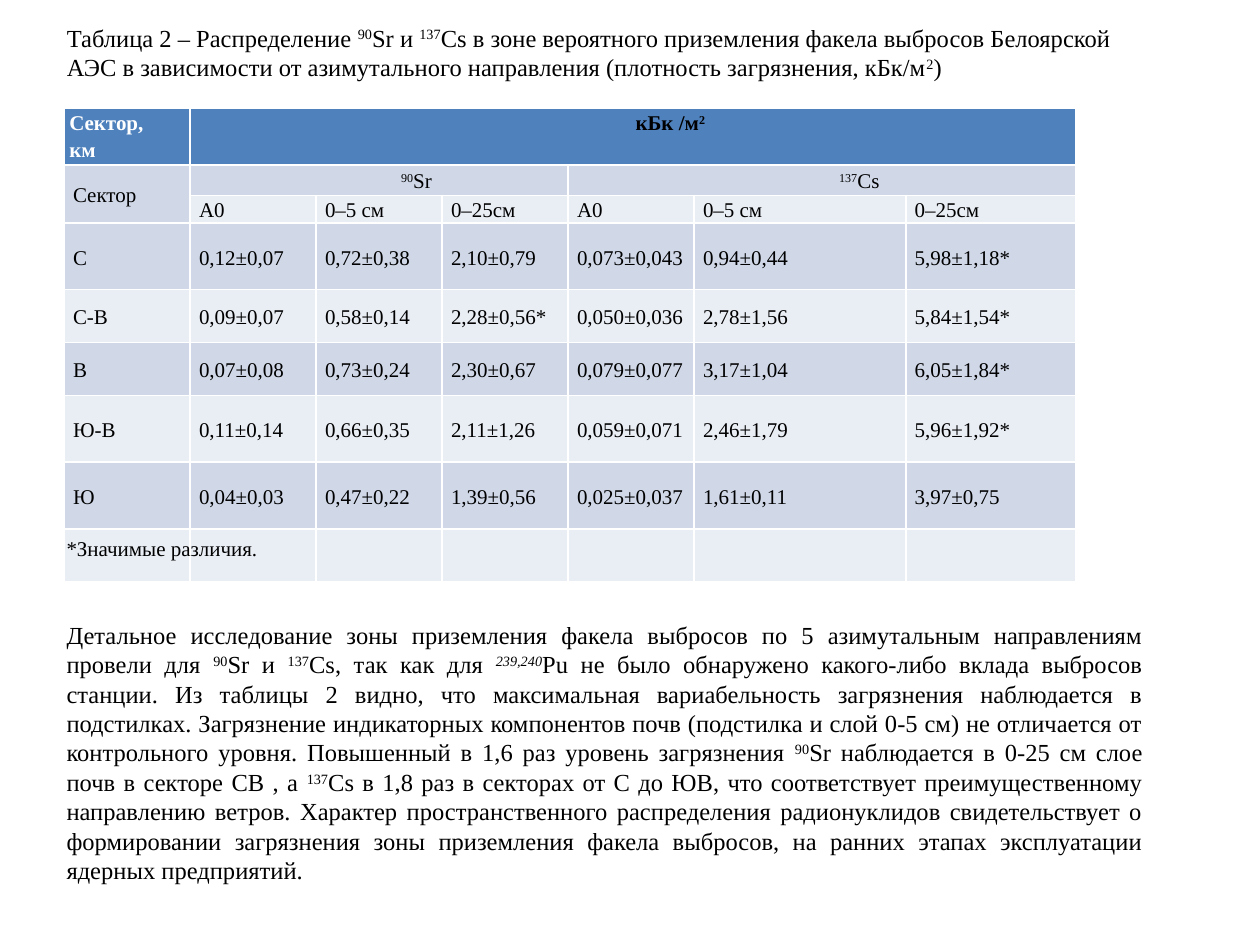
from pptx import Presentation
from pptx.dml.color import RGBColor
from pptx.enum.text import MSO_ANCHOR, MSO_AUTO_SIZE, PP_ALIGN
from pptx.util import Inches, Pt

LEFT, CENTER, JUSTIFY = PP_ALIGN.LEFT, PP_ALIGN.CENTER, PP_ALIGN.JUSTIFY
TOP, MIDDLE = MSO_ANCHOR.TOP, MSO_ANCHOR.MIDDLE
NO_FIT = MSO_AUTO_SIZE.NONE

FONT = "Times New Roman"
COLORS = {"text": "000000", "head_text": "FFFFFF", "head": "4F81BD",
          "dark_band": "D0D8E8", "light_band": "E9EDF4"}

# Text is a list of runs: a string, or (string, style) with "sup" or "sup italic"
SR, CS = ("90", "sup"), ("137", "sup")
CAPTION = ["Таблица 2 – Распределение ", SR, "Sr и ", CS,
           "Cs в зоне вероятного приземления факела выбросов Белоярской АЭС "
           "в зависимости от азимутального направления (плотность загрязнения, кБк/м",
           ("2", "sup"), ")"]
FOOTNOTE = ["*Значимые различия."]
BODY = ["Детальное исследование зоны приземления факела выбросов по 5 азимутальным "
        "направлениям провели для ", SR, "Sr и ", CS, "Cs, так как для ",
        ("239,240", "sup italic"),
        "Pu не было обнаружено какого-либо вклада выбросов станции. Из таблицы 2 видно, "
        "что максимальная вариабельность загрязнения наблюдается в подстилках. "
        "Загрязнение индикаторных компонентов почв (подстилка и слой 0-5 см) не "
        "отличается от контрольного уровня. Повышенный в 1,6 раз уровень загрязнения ",
        SR, "Sr наблюдается в 0-25 см слое почв в секторе СВ , а ", CS,
        "Cs в 1,8 раз в секторах от С до ЮВ, что соответствует преимущественному "
        "направлению ветров. Характер пространственного распределения радионуклидов "
        "свидетельствует о формировании загрязнения зоны приземления факела выбросов, "
        "на ранних этапах эксплуатации ядерных предприятий."]

HEAD = [["Сектор,"], ["км"]]
UNIT = ["кБк /м", ("2", "sup")]
LAYERS = ["А0", "0–5 см", "0–25см"]
SECTORS = [
    ["С", "0,12±0,07", "0,72±0,38", "2,10±0,79", "0,073±0,043", "0,94±0,44", "5,98±1,18*"],
    ["С-В", "0,09±0,07", "0,58±0,14", "2,28±0,56*", "0,050±0,036", "2,78±1,56", "5,84±1,54*"],
    ["В", "0,07±0,08", "0,73±0,24", "2,30±0,67", "0,079±0,077", "3,17±1,04", "6,05±1,84*"],
    ["Ю-В", "0,11±0,14", "0,66±0,35", "2,11±1,26", "0,059±0,071", "2,46±1,79", "5,96±1,92*"],
    ["Ю", "0,04±0,03", "0,47±0,22", "1,39±0,56", "0,025±0,037", "1,61±0,11", "3,97±0,75"],
]
COL_WIDTHS = [1] * 5 + [1.68, 1.35]
ROW_HEIGHTS = [0.45, 0.24, 0.22, 0.53, 0.42, 0.42, 0.53, 0.53, 0.42]
MERGES = [(0, 1, 0, 6), (1, 0, 2, 0), (1, 1, 1, 3), (1, 4, 1, 6)]
TEXT_LEFT, TEXT_WIDTH = 0.43, 8.74
TABLE_LEFT, TABLE_TOP = 0.51, 0.86


def rgb(name):
    return RGBColor.from_string(COLORS[name])


def write(p, runs, size, align=LEFT, color="text", bold=False):
    p.alignment = align
    for run in runs:
        text, style = (run, "") if isinstance(run, str) else run
        r = p.add_run()
        r.text = text
        r.font.name, r.font.size, r.font.bold = FONT, Pt(size), bold
        r.font.color.rgb = rgb(color)
        if "italic" in style:
            r.font.italic = True
        if "sup" in style:
            r.font._element.set("baseline", "30000")


def place_text(sp, top, height, runs, size, align=LEFT):
    sp.left, sp.top = Inches(TEXT_LEFT), Inches(top)
    sp.width, sp.height = Inches(TEXT_WIDTH), Inches(height)
    tf = sp.text_frame
    tf.word_wrap, tf.auto_size, tf.vertical_anchor = True, NO_FIT, TOP
    write(tf.paragraphs[0], runs, size, align)


def fill_cell(cell, paragraphs, align=LEFT, color="text", bold=False):
    tf = cell.text_frame
    for i, runs in enumerate(paragraphs):
        p = tf.add_paragraph() if i else tf.paragraphs[0]
        p.line_spacing = 1.15
        write(p, runs, 12, align, color, bold)
        if align == CENTER:
            p._p.get_or_add_pPr().set("indent", str(Inches(0.59)))


def add_density_table(s):
    table = s.shapes.add_table(
        len(ROW_HEIGHTS), len(COL_WIDTHS), Inches(TABLE_LEFT), Inches(TABLE_TOP),
        Inches(sum(COL_WIDTHS)), Inches(sum(ROW_HEIGHTS))).table
    for col, width in zip(table.columns, COL_WIDTHS):
        col.width = Inches(width)
    for i, (row, height) in enumerate(zip(table.rows, ROW_HEIGHTS)):
        row.height = Inches(height)
        band = "head" if i == 0 else "dark_band" if i % 2 else "light_band"
        for cell in row.cells:
            cell.fill.solid()
            cell.fill.fore_color.rgb = rgb(band)
            cell.margin_left = cell.margin_right = Inches(0.07 if i else 0.04)
            cell.margin_top = cell.margin_bottom = 0
            cell.vertical_anchor = MIDDLE if i else TOP
    for r1, c1, r2, c2 in MERGES:
        table.cell(r1, c1).merge(table.cell(r2, c2))

    fill_cell(table.cell(0, 0), HEAD, color="head_text", bold=True)
    fill_cell(table.cell(0, 1), [UNIT], CENTER, bold=True)
    fill_cell(table.cell(1, 0), [["Сектор"]])
    fill_cell(table.cell(1, 1), [[SR, "Sr"]], CENTER)
    fill_cell(table.cell(1, 4), [[CS, "Cs"]], CENTER)
    for j, layer in enumerate(LAYERS * 2, start=1):
        fill_cell(table.cell(2, j), [[layer]])
    for i, values in enumerate(SECTORS, start=3):
        for j, value in enumerate(values):
            fill_cell(table.cell(i, j), [[value]])


def main():
    prs = Presentation()
    prs.slide_width, prs.slide_height = Inches(10), Inches(7.5)
    s = prs.slides.add_slide(prs.slide_layouts[5])
    place_text(s.shapes.title, 0.13, 0.6, CAPTION, 14)
    add_density_table(s)
    for top, height, runs, size, align in [(4.2, 0.3, FOOTNOTE, 12, LEFT),
                                           (4.87, 2.2, BODY, 14, JUSTIFY)]:
        place_text(s.shapes.add_textbox(0, 0, 0, 0), top, height, runs, size, align)
    prs.save("out.pptx")


if __name__ == "__main__":
    main()
